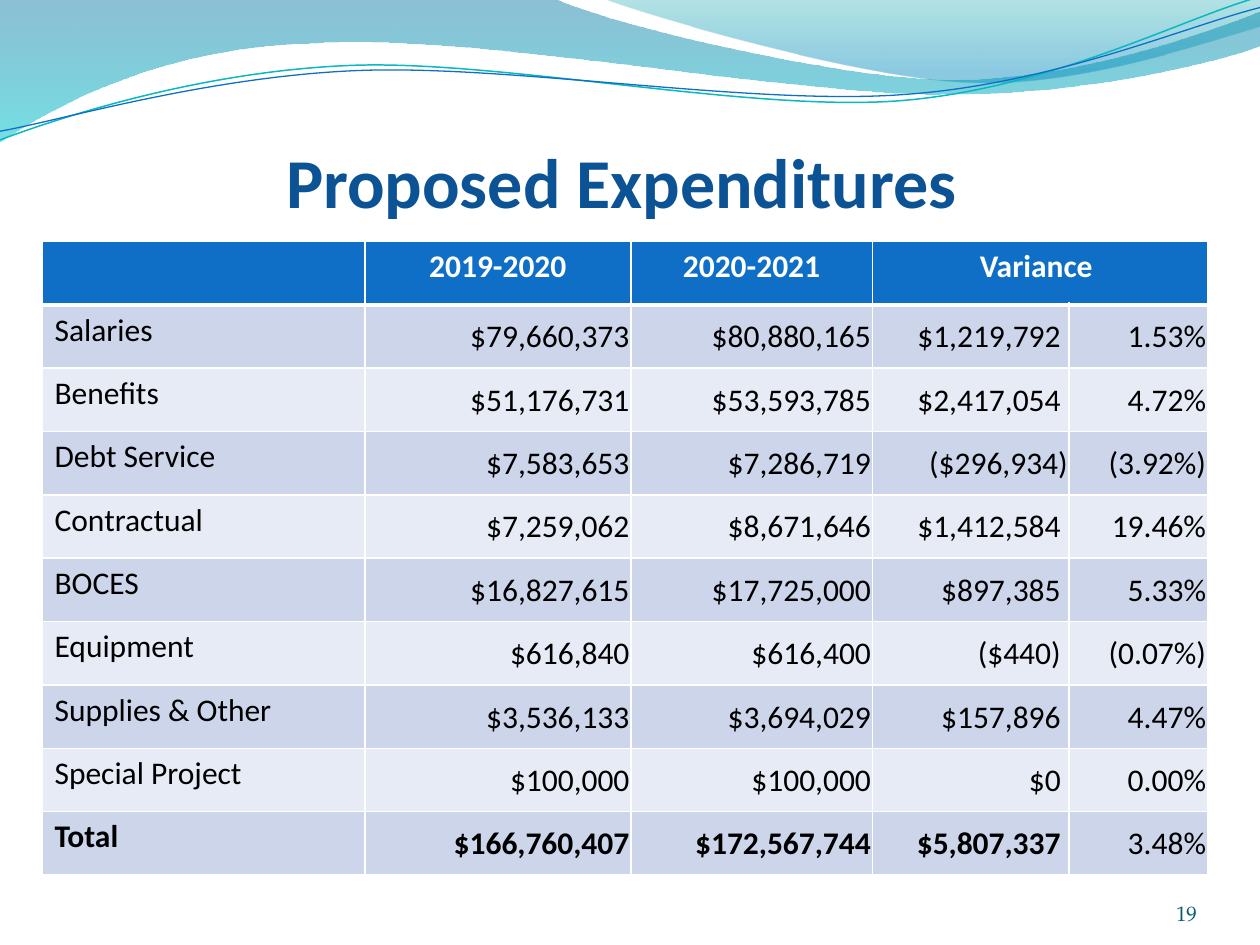
from lxml import etree
from pptx import Presentation
from pptx.dml.color import RGBColor
from pptx.enum import text as t
from pptx.oxml import ns
from pptx.util import Pt

COLORS = {
    "white": "FFFFFF", "black": "000000", "title": "0B5394", "number": "045D75",
    "header": "0F6FC6", "band": "CCD5EA", "light_band": "E7EBF5",
    "blue": "0F6FC6", "teal": "0AB8BF",
    "wave_top": "0074A1", "wave_bottom": "00C6CF",
    "crest_top": "00A1A9", "crest_bottom": "008BBF",
}
COLUMN_WIDTHS = [184.5, 152, 138, 112.5, 79]
ROW_HEIGHT = 36.2
HEADINGS = ["", "2019-2020", "2020-2021", "Variance ", ""]
EXPENDITURES = [
    ["Salaries", "$79,660,373", "$80,880,165", "$1,219,792 ", "1.53%"],
    ["Benefits", "$51,176,731", "$53,593,785", "$2,417,054 ", "4.72%"],
    ["Debt Service", "$7,583,653", "$7,286,719", "($296,934)", "(3.92%)"],
    ["Contractual", "$7,259,062", "$8,671,646", "$1,412,584 ", "19.46%"],
    ["BOCES", "$16,827,615", "$17,725,000", "$897,385 ", "5.33%"],
    ["Equipment", "$616,840", "$616,400", "($440) ", "(0.07%)"],
    ["Supplies & Other", "$3,536,133", "$3,694,029", "$157,896 ", "4.47%"],
    ["Special Project", "$100,000", "$100,000", "$0 ", "0.00%"],
    ["Total", "$166,760,407", "$172,567,744", "$5,807,337 ", "3.48%"],
]
# A path is a start point, then lines (x, y) and curves (x1, y1, x2, y2, x, y).
WAVE = [
    (0, 0), (317, -0.7), (342.7, 12.2, 478, 45.4, 545.8, 45.4),
    (614, 45.4, 690, 18.7, 720, 6.5), (720.7, 26),
    (707.8, 31.7, 626.4, 54.7, 537, 54), (447.8, 54, 275, 20.2, 185, 24.5),
    (92.9, 26, 33, 59.8, -0.7, 81.4),
]
CREST = [
    (345, -0.7), (366.5, 8, 491, 44.6, 553.7, 46.8),
    (616.3, 49.7, 692, 23, 720, 15), (720, 0),
]
TEAL_LINE = [
    (-1.4, 63), (33.8, 51.7, 114.1, 29.4, 199.8, 29.9),
    (284.8, 30.3, 425.8, 67.2, 512.4, 64.9), (599, 62.3, 676.4, 25.7, 720.2, 15.5),
]
BLUE_LINE = [
    (-1.1, 58), (33, 53.7, 118.2, 32.5, 204.1, 33),
    (290.6, 33.4, 428.9, 63.8, 515.5, 61.4), (601.4, 59.6, 678.4, 30, 721.4, 21.3),
]


def rgb(name):
    return RGBColor.from_string(COLORS[name])


def add_outline(page, path, close):
    """Lay out all points as lines, then join each curve's three into a Bézier."""
    points = [(Pt(part[i]), Pt(part[i + 1])) for part in path
              for i in range(0, len(part), 2)]
    builder = page.shapes.build_freeform(*points[0])
    builder.add_line_segments(points[1:], close=close)
    shape = builder.convert_to_shape()
    shape.shadow.inherit = False
    lines = iter(list(shape.element.iter(ns.qn("a:lnTo"))))
    for part in path[1:]:
        line = next(lines)
        if len(part) == 6:
            curve = etree.Element(ns.qn("a:cubicBezTo"))
            line.addprevious(curve)
            for piece in (line, next(lines), next(lines)):
                curve.append(piece[0])
                piece.getparent().remove(piece)
    return shape


def add_wave(page, path, stops):
    """Add a filled wave; stops are (position, colour name, opacity percent)."""
    shape = add_outline(page, path, True)
    shape.line.fill.background()
    shape.fill.gradient()
    shape.fill.gradient_angle = 270
    for stop, (position, color, _) in zip(shape.fill.gradient_stops, stops):
        stop.position = position
        stop.color.rgb = rgb(color)
    for element, (_, _, opacity) in zip(shape.element.iter(ns.qn("a:srgbClr")), stops):
        etree.SubElement(element, ns.qn("a:alpha"), val=str(opacity * 1000))


def add_curve(page, path, color, width):
    shape = add_outline(page, path, False)
    shape.rotation = 357.3
    shape.fill.background()
    shape.line.color.rgb = rgb(color)
    shape.line.width = Pt(width)


def write(frame, text, size, color, align, bold=False, font="Calibri"):
    para = frame.paragraphs[0]
    para.text = text
    para.alignment = align
    for span in para.runs:
        span.font.name = font
        span.font.size = Pt(size)
        span.font.bold = bold
        span.font.color.rgb = rgb(color)


def set_frame(frame, top=0):
    frame.word_wrap = True
    frame.auto_size = t.MSO_AUTO_SIZE.NONE
    frame.vertical_anchor = t.MSO_ANCHOR.BOTTOM
    frame.margin_left = frame.margin_right = frame.margin_bottom = 0
    frame.margin_top = Pt(top)


def set_title(page, text):
    """Fill the title and bring it in front of the waves."""
    title = page.shapes.title
    title.left, title.top, title.width, title.height = Pt(35.6), Pt(54), Pt(648), Pt(73.4)
    set_frame(title.text_frame, 3.6)
    write(title.text_frame, text, 40, "title", t.PP_ALIGN.CENTER, True)
    page.shapes.element.append(title.element)


def add_page_number(page, text):
    box = page.shapes.add_textbox(Pt(624), Pt(500.4), Pt(60), Pt(28.8))
    set_frame(box.text_frame)
    write(box.text_frame, text, 12, "number", t.PP_ALIGN.RIGHT, font="TeX Gyre Pagella")


def set_borders(cell, top, bottom):
    properties = cell._tc.get_or_add_tcPr()
    for side, width in (("L", 1), ("R", 1), ("T", top), ("B", bottom)):
        line = etree.SubElement(properties, ns.qn("a:ln" + side), w=str(Pt(width)))
        fill = etree.SubElement(line, ns.qn("a:solidFill"))
        etree.SubElement(fill, ns.qn("a:srgbClr"), val=COLORS["white"])


def fill_cell(cell, color):
    cell.fill.solid()
    cell.fill.fore_color.rgb = rgb(color)


def add_expenditure_table(page):
    rows = [HEADINGS] + EXPENDITURES
    frame = page.shapes.add_table(len(rows), len(HEADINGS), Pt(24), Pt(138),
                                  Pt(sum(COLUMN_WIDTHS)), Pt(ROW_HEIGHT * len(rows)))
    table = frame.table
    table.first_row = table.horz_banding = False
    for column, width in zip(table.columns, COLUMN_WIDTHS):
        column.width = Pt(width)
    for i, values in enumerate(rows):
        table.rows[i].height = Pt(ROW_HEIGHT)
        for j, value in enumerate(values):
            cell = table.cell(i, j)
            set_borders(cell, 3 if i == 1 else 1, 3 if i == 0 else 1)
            if i == 0:
                fill_cell(cell, "header")
                write(cell.text_frame, value, 18, "white", t.PP_ALIGN.CENTER, True)
                continue
            fill_cell(cell, "band" if i % 2 else "light_band")
            bold = values[0] == "Total" and j < 4
            align = t.PP_ALIGN.RIGHT if j else t.PP_ALIGN.LEFT
            write(cell.text_frame, value, 18, "black", align, bold)
            if j:
                cell.vertical_anchor = t.MSO_ANCHOR.MIDDLE
                cell.margin_left = cell.margin_right = cell.margin_top = Pt(0.75)
                cell.margin_bottom = 0
    table.cell(0, 3).merge(table.cell(0, 4))


def main():
    deck = Presentation()
    deck.slide_width, deck.slide_height = Pt(720), Pt(540)
    page = deck.slides.add_slide(deck.slide_layouts[5])
    add_wave(page, WAVE, [(0, "wave_top", 45), (1, "wave_bottom", 55)])
    add_wave(page, CREST, [(0, "crest_top", 30), (0.8, "crest_bottom", 45)])
    add_curve(page, TEAL_LINE, "teal", 0.85)
    add_curve(page, BLUE_LINE, "blue", 0.75)
    set_title(page, "Proposed Expenditures ")
    add_expenditure_table(page)
    add_page_number(page, "19")
    deck.save("out.pptx")


if __name__ == "__main__":
    main()
